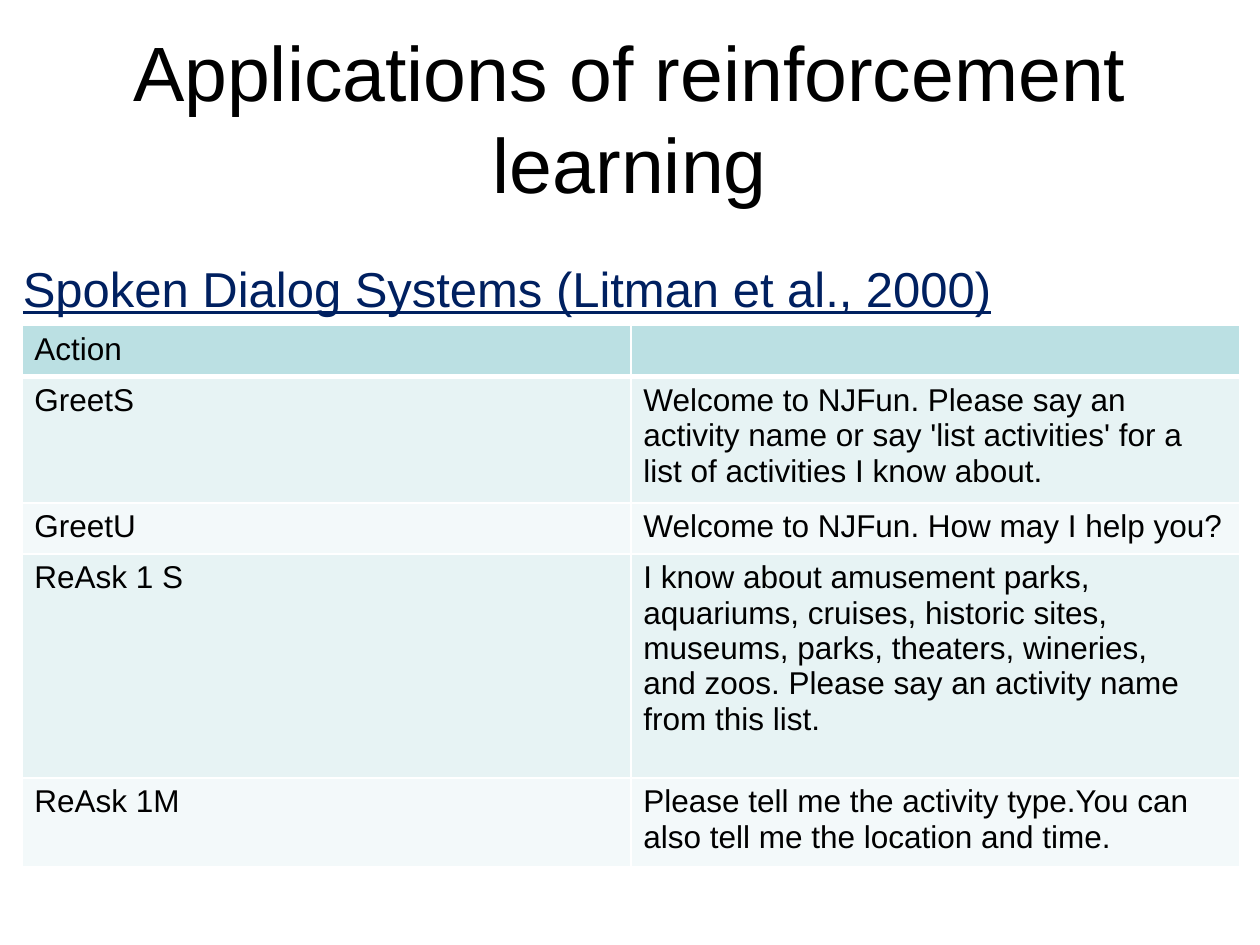
from dataclasses import dataclass

from lxml.etree import SubElement
from pptx import Presentation
from pptx.dml.color import RGBColor
from pptx.enum.text import MSO_ANCHOR, PP_ALIGN
from pptx.oxml.ns import qn
from pptx.util import Pt


@dataclass(frozen=True)
class Theme:
    font: str = "Arial"
    ink: str = "000000"
    navy: str = "002060"
    header: str = "BBE0E3"
    bands: tuple = ("E7F3F4", "F3F9FA")
    rule: str = "FFFFFF"
    title_size: int = 44
    heading_size: int = 28
    cell_size: int = 18


THEME = Theme()


def add_span(para, text, size, color):
    span = para.add_run()
    span.text = text
    span.font.name = THEME.font
    span.font.size = Pt(size)
    span.font.bold = False
    span.font.color.rgb = RGBColor.from_string(color)
    return span


def add_border(cell, side, width):
    line = SubElement(cell._tc.get_or_add_tcPr(), qn(f"a:ln{side}"), w=str(Pt(width)))
    fill = SubElement(line, qn("a:solidFill"))
    SubElement(fill, qn("a:srgbClr"), val=THEME.rule)


deck = Presentation()
deck.slide_width, deck.slide_height = Pt(720), Pt(540)
page = deck.slides.add_slide(deck.slide_layouts[6])

# Title
title_box = page.shapes.add_textbox(Pt(36), Pt(21.6), Pt(648), Pt(90))
title_box.text_frame.word_wrap = True
title_box.text_frame.vertical_anchor = MSO_ANCHOR.MIDDLE
para = title_box.text_frame.paragraphs[0]
para.alignment = PP_ALIGN.CENTER
add_span(para, "Applications of reinforcement learning", THEME.title_size, THEME.ink)

# Table of dialog actions: row height, action, prompt paragraphs
rows = [
    (29.3, "Action", []),
    (68, "GreetS", ["Welcome to NJFun. Please say an activity name or say "
                    "'list activities' for a list of activities I know about."]),
    (29.3, "GreetU", ["Welcome to NJFun. How may I help you?"]),
    (128, "ReAsk 1 S", ["I know about amusement parks, aquariums, cruises, historic sites, "
                        "museums, parks, theaters, wineries,",
                        "and zoos. Please say an activity name from this list."]),
    (47.5, "ReAsk 1M", ["Please tell me the activity type.You can also tell me "
                        "the location and time."]),
]
total_height = sum(height for height, _, _ in rows)
table = page.shapes.add_table(len(rows), 2, Pt(12.5), Pt(186), Pt(696), Pt(total_height)).table

for row_index, (height, action, prompt) in enumerate(rows):
    table.rows[row_index].height = Pt(height)
    color = THEME.bands[(row_index - 1) % 2] if row_index else THEME.header
    for column, lines in enumerate(([action], prompt)):
        cell = table.cell(row_index, column)
        for side in "LRTB":
            under_header = (row_index, side) in ((0, "B"), (1, "T"))
            add_border(cell, side, 3 if under_header else 1)
        cell.fill.solid()
        cell.fill.fore_color.rgb = RGBColor.from_string(color)
        frame = cell.text_frame
        for line_index, line in enumerate(lines):
            para = frame.add_paragraph() if line_index else frame.paragraphs[0]
            add_span(para, line, THEME.cell_size, THEME.ink)

# Heading above the table
heading_box = page.shapes.add_textbox(Pt(6), Pt(144), Pt(678), Pt(41.5))
heading_box.text_frame.word_wrap = True
span = add_span(heading_box.text_frame.paragraphs[0],
                "Spoken Dialog Systems (Litman et al., 2000)",
                THEME.heading_size, THEME.navy)
span.font.underline = True

deck.save("out.pptx")
